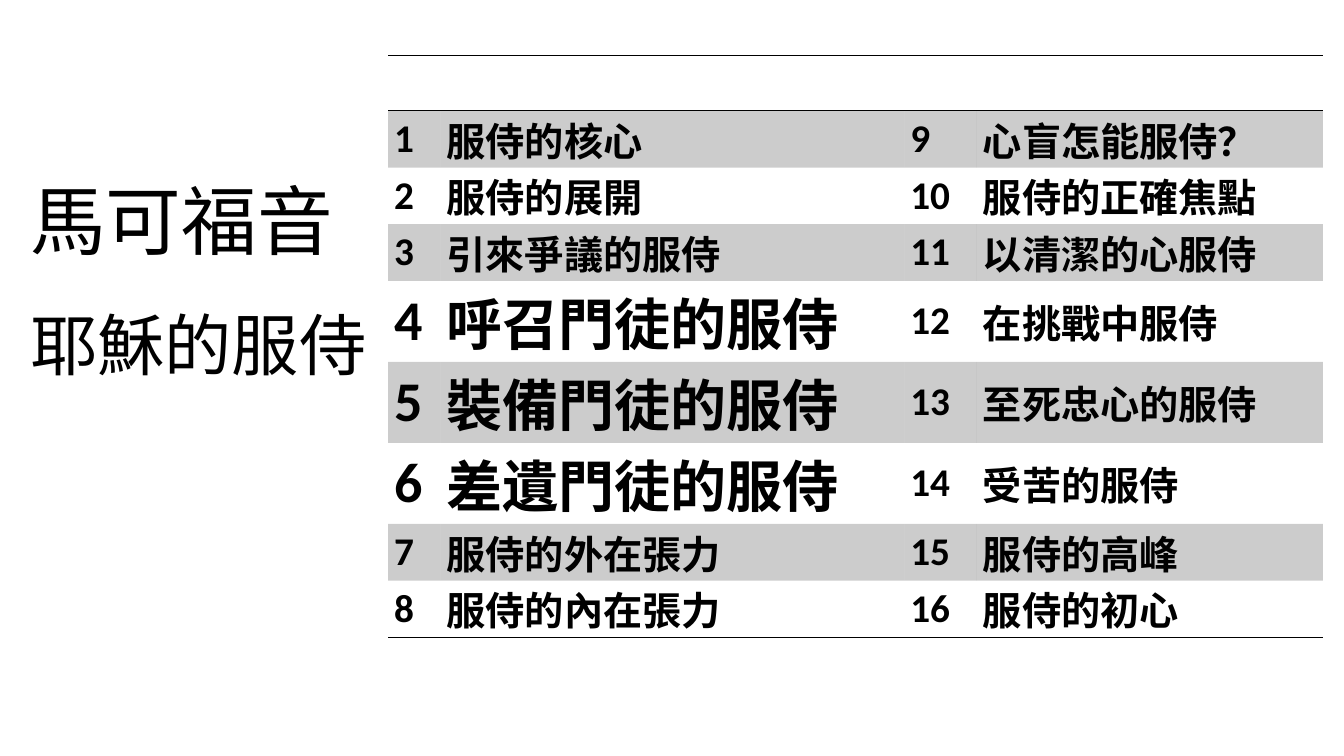
from pptx import Presentation
from pptx.dml.color import RGBColor
from pptx.enum.text import MSO_ANCHOR, MSO_AUTO_SIZE, PP_ALIGN
from pptx.oxml.ns import qn
from pptx.util import Inches, Pt
from lxml import etree

MIDDLE, TOP = MSO_ANCHOR.MIDDLE, MSO_ANCHOR.TOP
LEFT = PP_ALIGN.LEFT
NO_AUTO_SIZE = MSO_AUTO_SIZE.NONE

SLIDE_WIDTH, SLIDE_HEIGHT = 13.33, 7.5
SECTION_LAYOUT = 2
BLACK = "000000"
LATIN_FONT, CHINESE_FONT = "Calibri", "Noto Sans CJK SC"
NO_STYLE_NO_GRID = "{2D5ABB26-0587-4C30-8999-92F81FD0307C}"
COLUMN_WIDTHS = (0.52, 4.6, 0.72, 3.43)
HEADER_HEIGHT, ROW_HEIGHT, CURRENT_HEIGHT = 0.55, 0.56, 0.77
NORMAL_SIZE, CURRENT_SIZE = 28, 40
CURRENT_LESSONS = (4, 5, 6)
LESSONS = (
    "服侍的核心", "服侍的展開", "引來爭議的服侍", "呼召門徒的服侍",
    "裝備門徒的服侍", "差遺門徒的服侍", "服侍的外在張力", "服侍的內在張力",
    "心盲怎能服侍？", "服侍的正確焦點", "以清潔的心服侍", "在挑戰中服侍",
    "至死忠心的服侍", "受苦的服侍", "服侍的高峰", "服侍的初心",
)


def color(hex_string):
    return RGBColor.from_string(hex_string)


def format_run(run, size, latin_font, bold):
    font = run.font
    font.size, font.name, font.bold = Pt(size), latin_font, bold
    font.color.rgb = color(BLACK)
    east_asian = etree.SubElement(font._element, qn("a:ea"))
    east_asian.set("typeface", CHINESE_FONT)


def fill_placeholder(placeholder, box, text, size, anchor, line_spacing, space_before):
    left, top, width, height = map(Inches, box)
    placeholder.left, placeholder.top = left, top
    placeholder.width, placeholder.height = width, height
    frame = placeholder.text_frame
    frame.text = text
    frame.word_wrap = True
    frame.auto_size = NO_AUTO_SIZE
    frame.vertical_anchor = anchor
    paragraph = frame.paragraphs[0]
    paragraph.alignment = LEFT
    paragraph.line_spacing = line_spacing
    paragraph.space_before = Pt(space_before)
    format_run(paragraph.runs[0], size, CHINESE_FONT, False)


def add_headings(slide, box):
    left, top, width, height = box
    fill_placeholder(slide.shapes.title, box, "耶穌的服侍", 48, MIDDLE, 0.9, 0)
    book_box = (left, top + 1.15, width - 0.34, 0.9)
    fill_placeholder(slide.placeholders[1], book_box, "馬可福音", 54, TOP, 0.8, 10)


def add_border(cell, side):
    line = etree.SubElement(cell._tc.get_or_add_tcPr(), qn("a:" + side), w=str(Pt(1)))
    fill = etree.SubElement(line, qn("a:solidFill"))
    etree.SubElement(fill, qn("a:srgbClr"), val=BLACK)


def shade(cell):
    cell.fill.solid()
    cell.fill.fore_color.rgb = color(BLACK)
    shade_color = cell._tc.tcPr.find(".//" + qn("a:solidFill") + "/" + qn("a:srgbClr"))
    etree.SubElement(shade_color, qn("a:alpha"), val="20000")


def fill_cell(cell, text, size):
    cell.margin_left = cell.margin_right = Inches(0.06)
    cell.margin_top = cell.margin_bottom = 0
    cell.vertical_anchor = MIDDLE
    cell.text_frame.text = text
    format_run(cell.text_frame.paragraphs[0].runs[0], size, LATIN_FONT, True)


def add_lesson_table(slide, box):
    half = len(LESSONS) // 2
    frame = slide.shapes.add_table(half + 1, len(COLUMN_WIDTHS), *map(Inches, box))
    table = frame.table
    table.first_row = table.horz_banding = False
    next(frame._element.iter(qn("a:tableStyleId"))).text = NO_STYLE_NO_GRID
    for column, width in zip(table.columns, COLUMN_WIDTHS):
        column.width = Inches(width)

    # Empty header row between two rules
    table.rows[0].height = Inches(HEADER_HEIGHT)
    for cell in table.rows[0].cells:
        add_border(cell, "lnT")
        add_border(cell, "lnB")

    # Lessons run down the left half, then the right half
    for row in range(1, half + 1):
        is_current = row in CURRENT_LESSONS
        table.rows[row].height = Inches(CURRENT_HEIGHT if is_current else ROW_HEIGHT)
        for column, cell in enumerate(table.rows[row].cells):
            number = row + half * (column // 2)
            text = LESSONS[number - 1] if column % 2 else str(number)
            size = CURRENT_SIZE if number in CURRENT_LESSONS else NORMAL_SIZE
            fill_cell(cell, text, size)
            if row == half:
                add_border(cell, "lnB")
            if row % 2:
                shade(cell)


def main():
    presentation = Presentation()
    presentation.slide_width = Inches(SLIDE_WIDTH)
    presentation.slide_height = Inches(SLIDE_HEIGHT)
    slide = presentation.slides.add_slide(presentation.slide_layouts[SECTION_LAYOUT])
    add_headings(slide, (0.2, 0.7, 3.74, 5.52))
    add_lesson_table(slide, (3.85, 0.55, sum(COLUMN_WIDTHS), 5.66))
    presentation.save("out.pptx")


if __name__ == "__main__":
    main()
